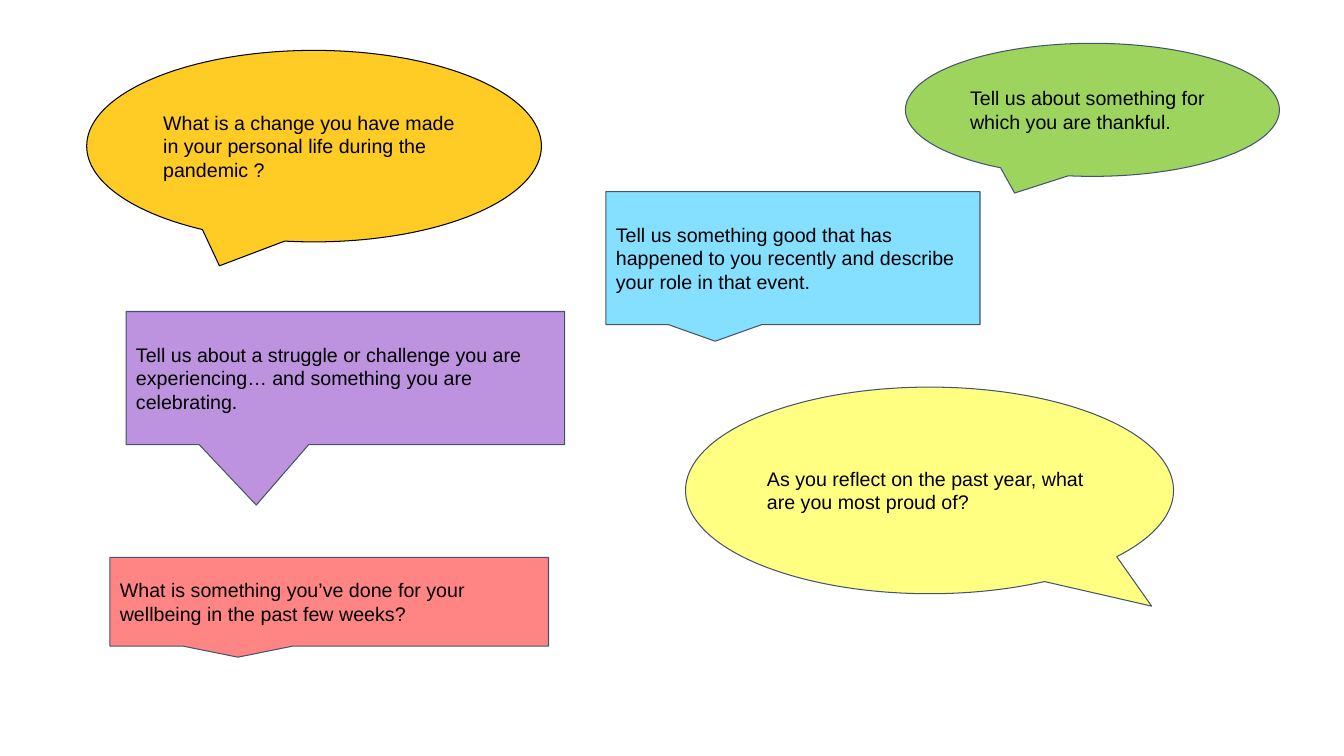
from dataclasses import dataclass

from pptx import Presentation
from pptx.dml.color import RGBColor
from pptx.enum.shapes import MSO_SHAPE
from pptx.enum.text import MSO_ANCHOR, PP_ALIGN
from pptx.shapes.autoshape import Shape
from pptx.slide import Slide
from pptx.util import Inches, Pt

COLOURS = {
    "purple": "BD92DE",
    "coral": "FF8585",
    "gold": "FFCB25",
    "green": "9CD45E",
    "sky": "85DFFF",
    "yellow": "FFFF81",
    "slate": "44546A",
    "black": "000000",
}
BLANK_LAYOUT = 6


@dataclass(frozen=True)
class Bubble:
    """A speech bubble holding one discussion prompt."""

    prompt: str
    kind: MSO_SHAPE
    left: float
    top: float
    width: float
    height: float
    fill: str
    pointer: tuple[float, ...] = (-0.208, 0.625)
    outline: str = "slate"


BUBBLES = [
    Bubble(
        "Tell us about a struggle or challenge you are experiencing… and something you are celebrating.",
        MSO_SHAPE.RECTANGULAR_CALLOUT, 1.25, 3.09, 4.35, 1.32, "purple", pointer=(-0.203, 0.955),
    ),
    Bubble(
        "What is something you’ve done for your wellbeing in the past few weeks?",
        MSO_SHAPE.RECTANGULAR_CALLOUT, 1.09, 5.53, 4.35, 0.88, "coral",
    ),
    Bubble(
        "What is a change you have made in your personal life during the pandemic ?",
        MSO_SHAPE.OVAL_CALLOUT, 0.86, 0.5, 4.51, 1.9, "gold", outline="black",
    ),
    Bubble(
        "Tell us about something for which you are thankful.",
        MSO_SHAPE.OVAL_CALLOUT, 8.98, 0.43, 3.71, 1.32, "green",
    ),
    Bubble(
        "Tell us something good that has happened to you recently and describe your role in that event.",
        MSO_SHAPE.ROUNDED_RECTANGULAR_CALLOUT, 6.01, 1.9, 3.71, 1.32, "sky", pointer=(-0.208, 0.625, 0),
    ),
    Bubble(
        "As you reflect on the past year, what are you most proud of?",
        MSO_SHAPE.OVAL_CALLOUT, 6.8, 3.84, 4.84, 2.05, "yellow", pointer=(0.455, 0.56),
    ),
]


def colour(name: str) -> RGBColor:
    """Look up a named colour."""
    return RGBColor.from_string(COLOURS[name])


def write_text(box: Shape, text: str, *, size: float = 14, font: str = "Arial",
               ink: str = "black", inset: float = 0.1) -> None:
    """Write left-aligned, vertically centred text in a shape."""
    frame = box.text_frame
    frame.word_wrap = True
    frame.vertical_anchor = MSO_ANCHOR.MIDDLE
    frame.margin_left = frame.margin_right = Inches(inset)
    frame.margin_top = frame.margin_bottom = Inches(inset)
    para = frame.paragraphs[0]
    para.alignment = PP_ALIGN.LEFT
    span = para.add_run()
    span.text = text
    span.font.size = Pt(size)
    span.font.name = font
    span.font.color.rgb = colour(ink)


def draw_bubble(page: Slide, bubble: Bubble) -> None:
    """Draw one speech bubble with its pointer and prompt."""
    box = page.shapes.add_shape(
        bubble.kind, Inches(bubble.left), Inches(bubble.top), Inches(bubble.width), Inches(bubble.height)
    )
    box.shadow.inherit = False
    for index, value in enumerate(bubble.pointer):
        box.adjustments[index] = value
    box.fill.solid()
    box.fill.fore_color.rgb = colour(bubble.fill)
    box.line.color.rgb = colour(bubble.outline)
    box.line.width = Pt(0.75)
    write_text(box, bubble.prompt)


def main() -> None:
    """Build and save the deck of discussion prompts."""
    deck = Presentation()
    deck.slide_width = Inches(13.33)
    deck.slide_height = Inches(7.5)
    page = deck.slides.add_slide(deck.slide_layouts[BLANK_LAYOUT])
    for bubble in BUBBLES:
        draw_bubble(page, bubble)
    deck.save("out.pptx")


if __name__ == "__main__":
    main()
